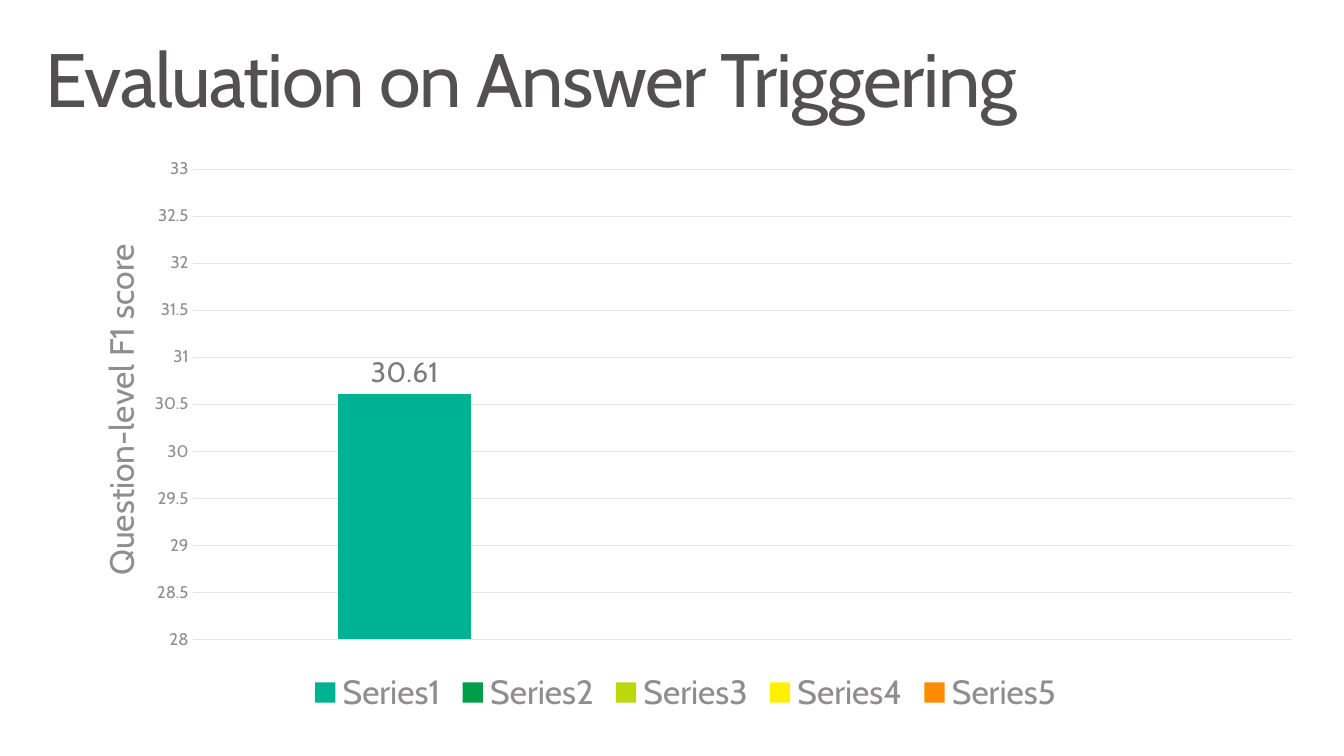
from pptx import Presentation
from pptx.chart.data import CategoryChartData
from pptx.dml.color import RGBColor
from pptx.enum.chart import (XL_CHART_TYPE as ChartType, XL_LABEL_POSITION as LabelPos,
                             XL_LEGEND_POSITION as LegendPos, XL_TICK_MARK as TickMark)
from pptx.enum.text import MSO_ANCHOR as Anchor
from pptx.oxml import parse_xml
from pptx.oxml.ns import nsdecls, qn
from pptx.util import Inches, Pt

THEME = {
    "font": "Cabin",
    "title": "525051", "axis": "8F8D8E", "label": "7E7B7C", "grid": "E5E5E5",
    "series": ["00B294", "009E49", "BAD80A", "FFF100", "FF8C00"],
    "title_size": 54, "large": 24, "label_size": 20, "tick_size": 12,
}


def style(font, size, color):
    font.name = THEME["font"]
    font.size = Pt(THEME[size])
    font.bold = False
    font.color.rgb = RGBColor.from_string(THEME[color])


def manual_layout(target="", **shares):
    """Build a chart layout from shares of the chart's size."""
    inner = f'<c:layoutTarget val="{target}"/>' if target else ""
    modes = "".join(f'<c:{k}Mode val="edge"/>' for k in "xy")
    sizes = "".join(f'<c:{k} val="{v}"/>' for k, v in shares.items())
    return parse_xml(f'<c:layout {nsdecls("c")}><c:manualLayout>{inner}{modes}{sizes}'
                     '</c:manualLayout></c:layout>')


prs = Presentation()
prs.slide_width, prs.slide_height = Inches(13.33), Inches(7.5)
s = prs.slides.add_slide(prs.slide_layouts[6])

# Title
title = s.shapes.add_textbox(Inches(0.29), Inches(0.32), Inches(12.75), Inches(0.98))
tf = title.text_frame
tf.word_wrap = True
tf.vertical_anchor = Anchor.TOP
tf.margin_left = tf.margin_right = Inches(0.16)
tf.margin_top = tf.margin_bottom = Inches(0.1)
tf.text = "Evaluation on Answer Triggering"
p = tf.paragraphs[0]
p.line_spacing = 0.9
r = p.runs[0]
style(r.font, "title_size", "title")
r.font._element.set("spc", "-100")

# Chart: only the first series has a score
data = CategoryChartData()
data.categories = ["1"]
for i in range(len(THEME["series"])):
    data.add_series(f"Series{i + 1}", [30.61 if i == 0 else None])
chart = s.shapes.add_chart(ChartType.COLUMN_CLUSTERED, Inches(0.53), Inches(1.45),
                           Inches(12.54), Inches(5.69), data).chart
chart.has_title = False
style(chart.font, "tick_size", "axis")

plot = chart.plots[0]
plot.vary_by_categories = False
plot.gap_width, plot.overlap = 219, -27
for series, color in zip(plot.series, THEME["series"]):
    series.format.fill.solid()
    series.format.fill.fore_color.rgb = RGBColor.from_string(color)
    labels = series.data_labels
    labels.show_value = True
    labels.position = LabelPos.OUTSIDE_END
    style(labels.font, "label_size", "label")

# Axes
chart.category_axis.visible = False
scores = chart.value_axis
scores.minimum_scale, scores.maximum_scale, scores.major_unit = 28, 33, 0.5
scores.major_tick_mark = scores.minor_tick_mark = TickMark.NONE
scores.format.line.fill.background()
style(scores.tick_labels.font, "tick_size", "axis")
grid = scores.major_gridlines.format.line
grid.width = Pt(0.75)
grid.color.rgb = RGBColor.from_string(THEME["grid"])

tf = scores.axis_title.text_frame
tf.text = "Question-level F1 score"
style(tf.paragraphs[0].runs[0].font, "large", "axis")
body = tf._txBody.find(qn("a:bodyPr"))
body.set("rot", "-5400000")
body.set("vert", "horz")

# Legend
chart.has_legend = True
chart.legend.position = LegendPos.BOTTOM
chart.legend.include_in_layout = False
style(chart.legend.font, "large", "axis")

# Room for the axis title on the left and the legend below
axis_title = scores.axis_title._element
plot_area = chart._chartSpace.chart.plotArea
for parent in (axis_title, plot_area):
    for old in parent.findall(qn("c:layout")):
        parent.remove(old)
axis_title.find(qn("c:tx")).addnext(manual_layout(x=0.03, y=0.16))
plot_area.insert(0, manual_layout("inner", x=0.11, y=0.04, w=0.87, h=0.82))

prs.save("out.pptx")
